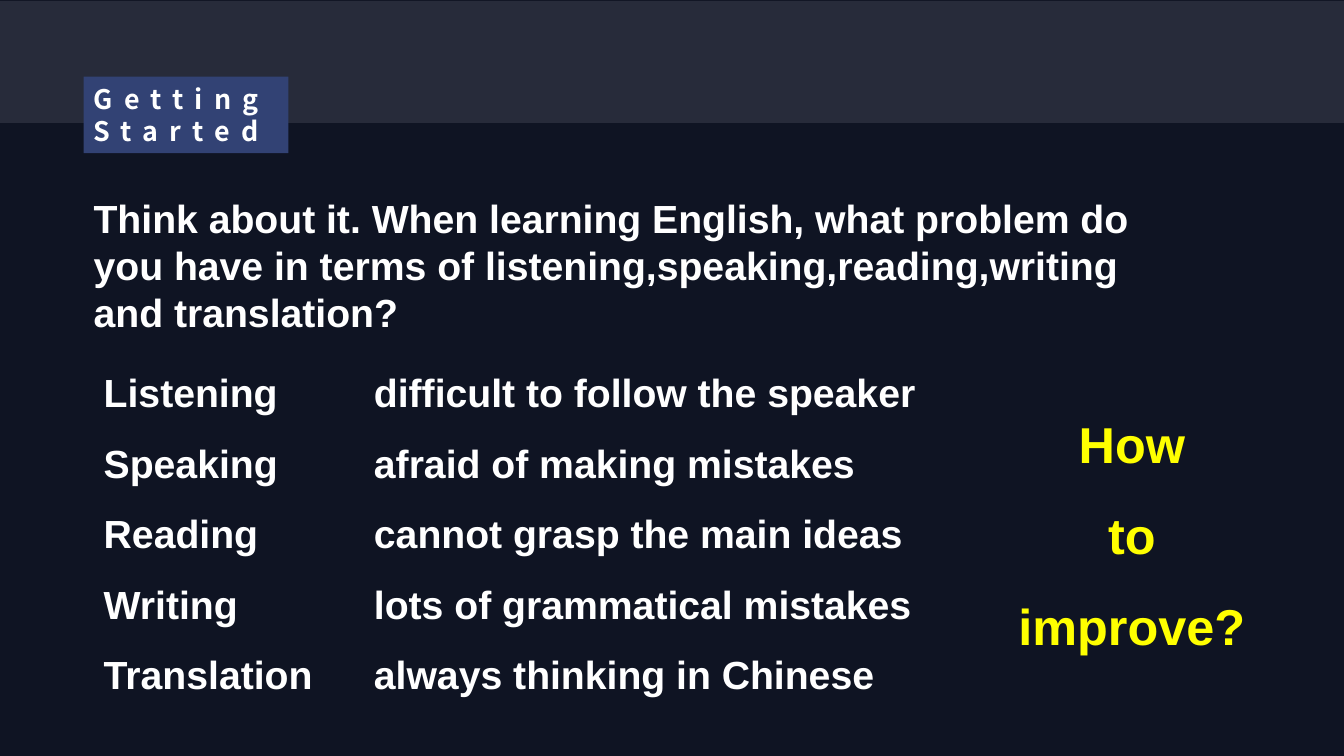
from pptx import Presentation
from pptx.dml.color import RGBColor
from pptx.enum import shapes, text
from pptx.oxml.ns import qn
from pptx.util import Cm, Pt

NIGHT = RGBColor(0x0F, 0x14, 0x23)
SLATE = RGBColor(0x27, 0x2B, 0x3A)
INDIGO = RGBColor(0x32, 0x42, 0x74)
WHITE = RGBColor(0xFF, 0xFF, 0xFF)
YELLOW = RGBColor(0xFF, 0xFF, 0x00)

QUESTION = ("Think about it. When learning English, what problem do you have "
            "in terms of listening,speaking,reading,writing and translation?")
PROBLEMS = {
    "Listening": "difficult to follow the speaker",
    "Speaking": "afraid of making mistakes",
    "Reading": "cannot grasp the main ideas",
    "Writing": "lots of grammatical mistakes",
    "Translation": "always thinking in Chinese",
}


def place(shape, left, top, width, height):
    shape.left, shape.top = Cm(left), Cm(top)
    shape.width, shape.height = Cm(width), Cm(height)


def write(shape, lines, size=28, color=WHITE, font="Arial", spacing=1.0,
          align=text.PP_ALIGN.LEFT, anchor=text.MSO_ANCHOR.TOP):
    """Fill a shape with bold, unbulleted paragraphs."""
    frame = shape.text_frame
    frame.text = "\n".join(lines)
    frame.word_wrap = True
    frame.auto_size = text.MSO_AUTO_SIZE.NONE
    frame.vertical_anchor = anchor
    for paragraph in frame.paragraphs:
        paragraph.alignment = align
        paragraph.line_spacing = spacing
        paragraph.space_before = Pt(0)
        paragraph.font.name = font
        paragraph.font.size = Pt(size)
        paragraph.font.bold = True
        paragraph.font.color.rgb = color
        properties = paragraph._p.get_or_add_pPr()
        properties.set("marL", "0")
        properties.set("indent", "0")
        bullet = properties.makeelement(qn("a:buNone"), {})
        properties.find(qn("a:defRPr")).addprevious(bullet)


def add_band(slide):
    """Draw the header band behind everything else."""
    band = slide.shapes.add_shape(shapes.MSO_SHAPE.RECTANGLE, 0, 0, 0, 0)
    place(band, 0, 0.02, 33.87, 3.08)
    band.fill.solid()
    band.fill.fore_color.rgb = SLATE
    band.line.fill.background()
    band.shadow.inherit = False
    slide.shapes._spTree.insert(2, band._element)


def set_heading(heading):
    place(heading, 2.11, 1.93, 5.16, 1.93)
    heading.fill.solid()
    heading.fill.fore_color.rgb = INDIGO
    write(heading, ["Getting Started"], 19.2, font="Noto Sans CJK SC",
          anchor=text.MSO_ANCHOR.MIDDLE)
    for run in heading.text_frame.paragraphs[0].runs:
        run._r.get_or_add_rPr().set("spc", "800")


def add_text(slide, box, lines, **style):
    caption = slide.shapes.add_textbox(0, 0, 0, 0)
    place(caption, *box)
    write(caption, lines, **style)


def main():
    deck = Presentation()
    deck.slide_width, deck.slide_height = Cm(33.87), Cm(19.05)
    slide = deck.slides.add_slide(deck.slide_layouts.get_by_name("Two Content"))
    slide.background.fill.solid()
    slide.background.fill.fore_color.rgb = NIGHT

    add_band(slide)
    set_heading(slide.shapes.title)
    add_text(slide, (2.11, 4.78, 28.12, 3.76), [QUESTION])

    skills, difficulties = slide.placeholders[1], slide.placeholders[2]
    place(skills, 2.36, 8.56, 5.97, 9.6)
    write(skills, PROBLEMS.keys(), spacing=1.5)
    place(difficulties, 9.17, 8.56, 14.3, 9.6)
    write(difficulties, PROBLEMS.values(), spacing=1.5)

    add_text(slide, (25.17, 9.53, 6.71, 7.19), ["How", "to", "improve?"],
             size=36, color=YELLOW, spacing=1.5, align=text.PP_ALIGN.CENTER)
    deck.save("out.pptx")


if __name__ == "__main__":
    main()
